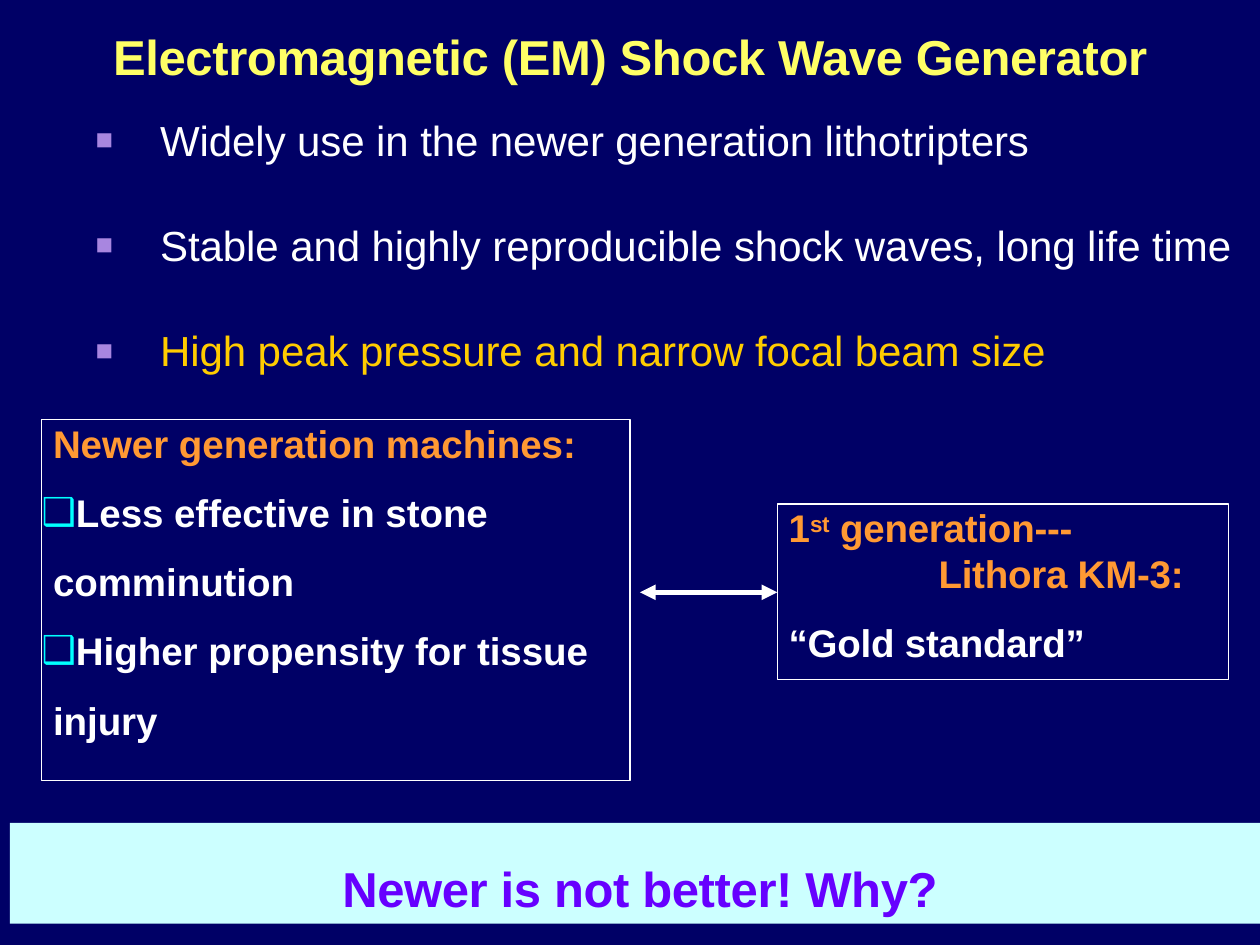
from pptx import Presentation
from pptx.dml.color import RGBColor as Rgb
from pptx.enum.shapes import MSO_CONNECTOR as Link, MSO_SHAPE as Kind
from pptx.enum.text import MSO_ANCHOR as Anchor, PP_ALIGN as Align
from pptx.oxml.ns import qn
from pptx.util import Cm, Pt
from lxml.etree import SubElement as Sub

HUES = {"navy": "000066", "white": "FFFFFF", "lemon": "FFFF66", "gold": "FFCC00",
        "orange": "FF9933", "cyan": "00FFFF", "lilac": "A886E0",
        "ice": "CCFFFF", "violet": "6600FF"}


def hue(name):
    return Rgb.from_string(HUES[name])


def write(frame, text, size=22, color="white", bold=True, track=0, align=Align.LEFT,
          left=0, first=0, before=0, lines=None, mark=None, tint=None, scale=100):
    """Add a paragraph; text between carets is raised, mark is the bullet."""
    frame.margin_left = frame.margin_right = frame.margin_top = frame.margin_bottom = 0
    frame.word_wrap = True
    frame.vertical_anchor = Anchor.TOP
    para = frame.paragraphs[0]
    if para.runs:
        para = frame.add_paragraph()
    para.alignment = align
    para.space_before = Pt(before)
    if lines:
        para.line_spacing = lines
    props = para._p.get_or_add_pPr()
    props.set("marL", str(Cm(left)))
    props.set("indent", str(Cm(first)))
    if mark:
        Sub(Sub(props, qn("a:buClr")), qn("a:srgbClr"), val=HUES[tint])
        Sub(props, qn("a:buSzPct"), val=str(scale * 1000))
        Sub(props, qn("a:buFont"), typeface="Arial")
        Sub(props, qn("a:buChar"), char=mark)
    for i, part in enumerate(text.split("^")):
        run = para.add_run()
        run.text = part
        font = run.font
        font.name, font.size, font.bold = "Arial", Pt(size), bold
        font.color.rgb = hue(color)
        run._r.get_or_add_rPr().set("spc", str(track))
        if i % 2:
            run._r.get_or_add_rPr().set("baseline", "25000")


deck = Presentation()
deck.slide_width, deck.slide_height = Cm(25.4), Cm(19.05)
slide = deck.slides.add_slide(deck.slide_layouts[6])
slide.background.fill.solid()
slide.background.fill.fore_color.rgb = hue("navy")
shapes = slide.shapes

# Title and main points
title = shapes.add_textbox(Cm(1.9), Cm(0.53), Cm(21.6), Cm(1)).text_frame
write(title, "Electromagnetic (EM) Shock Wave Generator", size=28, color="lemon",
      track=-20, align=Align.CENTER)

points = shapes.add_textbox(Cm(1.9), Cm(2.31), Cm(23.4), Cm(4.95)).text_frame
for i, (text, color) in enumerate([
        ("Widely use in the newer generation lithotripters", "white"),
        ("Stable and highly reproducible shock waves, long life time", "white"),
        ("High peak pressure and narrow focal beam size", "gold")]):
    write(points, text, size=24, color=color, bold=False, track=-5, left=1.33,
          first=-1.3, before=31.3 if i else 0, mark="■", tint="lilac", scale=69)

# Framed boxes and the closing bar
frames = []
for x, y, w, h, fill, line in [(15.67, 10.16, 9.1, 3.54, "navy", "white"),
                               (0.84, 8.46, 11.86, 7.27, "navy", "white"),
                               (0.2, 16.59, 25.2, 2.03, "ice", None)]:
    box = shapes.add_shape(Kind.RECTANGLE, Cm(x), Cm(y), Cm(w), Cm(h))
    box.shadow.inherit = False
    box.fill.solid()
    box.fill.fore_color.rgb = hue(fill)
    if line:
        box.line.color.rgb = hue(line)
        box.line.width = Pt(0.75)
    else:
        box.line.fill.background()
    frames.append(box.text_frame)
old, new, bar = frames

write(old, "1^st^ generation---", color="orange", track=-10, left=0.23)
write(old, "Lithora KM-3:", color="orange", track=-10, left=0.23, first=3.02)
write(old, "“Gold standard”", track=-10, left=0.23, before=13.2)

write(new, "Newer generation machines:", color="orange", left=0.23)
for text in ["Less effective in stone comminution", "Higher propensity for tissue injury"]:
    write(new, text, left=0.23, first=-0.23, lines=1.5, mark="❑", tint="cyan")

write(bar, "Newer is not better! Why?", size=28, color="violet", track=-20,
      align=Align.CENTER)
bar.margin_top, bar.margin_left = Cm(0.72), Cm(0.2)

# Two-way arrow between the boxes
arrow = shapes.add_connector(Link.STRAIGHT, Cm(12.9), Cm(11.94), Cm(15.67), Cm(11.94))
arrow.line.color.rgb = hue("white")
arrow.line.width = Pt(3)
for end in ("headEnd", "tailEnd"):
    Sub(arrow.line._get_or_add_ln(), qn("a:" + end), type="triangle")
Sub(arrow._element.spPr, qn("a:effectLst"))

deck.save("out.pptx")
